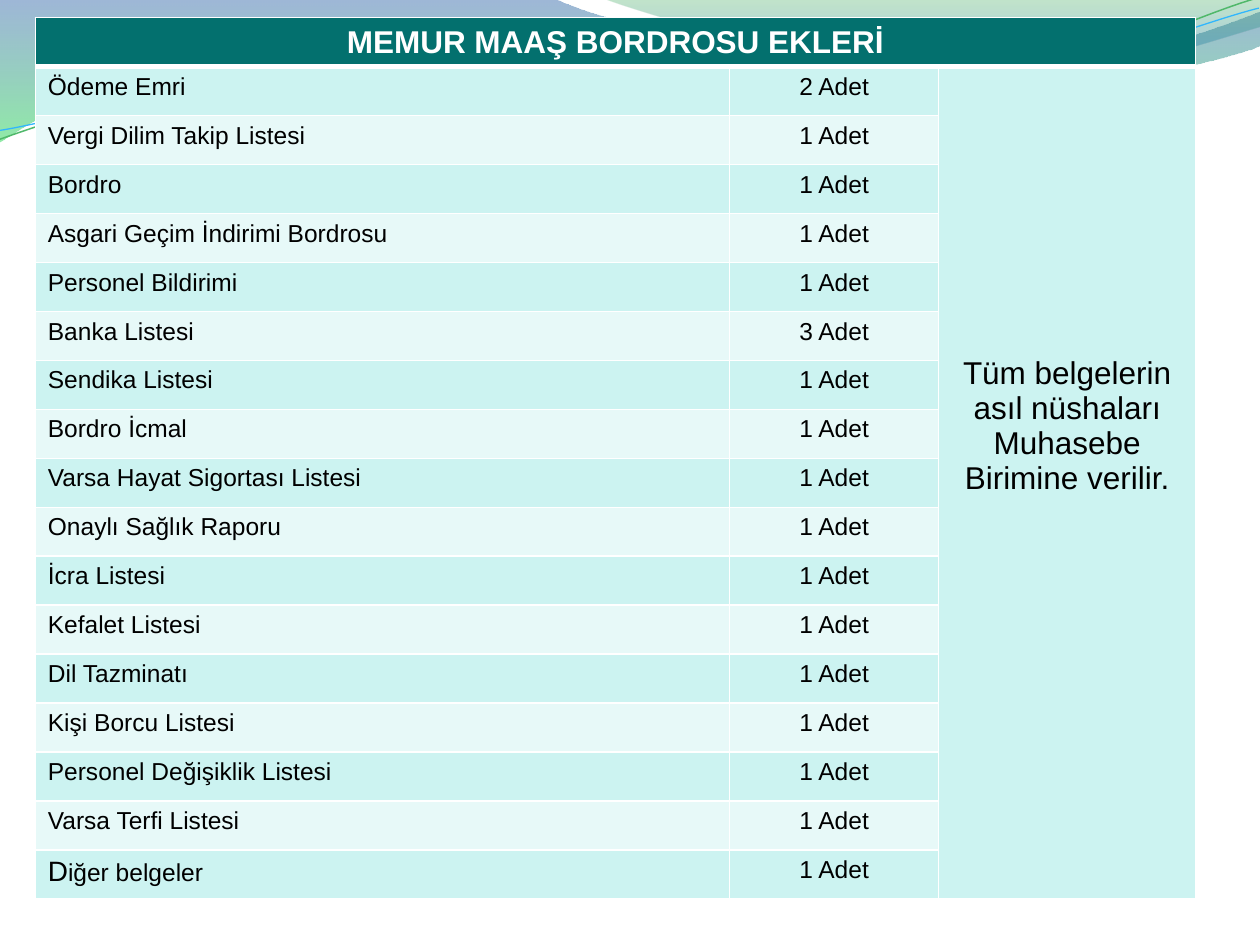
from lxml.etree import Element, SubElement
from pptx import Presentation
from pptx.dml.color import RGBColor as Rgb
from pptx.enum.text import MSO_ANCHOR as Anchor, PP_ALIGN as Align
from pptx.oxml.ns import qn
from pptx.util import Inches, Pt

WHITE = Rgb(0xFF, 0xFF, 0xFF)
BLACK = Rgb(0x00, 0x00, 0x00)
HEADER_TEAL = Rgb(0x03, 0x70, 0x6E)
BAND_DARK = Rgb(0xCC, 0xF3, 0xF1)
BAND_LIGHT = Rgb(0xE7, 0xF9, 0xF8)
WAVE_BLUE = Rgb(0x29, 0x60, 0xA7)
WAVE_LIME = Rgb(0x35, 0xDA, 0x5E)
WAVE_GREEN = Rgb(0x36, 0xA7, 0x52)
WAVE_SKY = Rgb(0x24, 0x72, 0xD3)
LINE_GREEN = Rgb(0x50, 0xB8, 0x6A)
LINE_BLUE = Rgb(0x31, 0xB6, 0xFD)

FONT = "Arial"
CURVE_ROTATION = 357.3
TITLE = "MEMUR MAAŞ BORDROSU EKLERİ"
NOTE = "Tüm belgelerin asıl nüshaları Muhasebe Birimine verilir."
DOCUMENTS = [
    ("Ödeme Emri", 2),
    ("Vergi Dilim Takip Listesi", 1),
    ("Bordro", 1),
    ("Asgari Geçim İndirimi Bordrosu", 1),
    ("Personel Bildirimi", 1),
    ("Banka Listesi", 3),
    ("Sendika Listesi", 1),
    ("Bordro İcmal", 1),
    ("Varsa Hayat Sigortası Listesi", 1),
    ("Onaylı Sağlık Raporu", 1),
    ("İcra Listesi", 1),
    ("Kefalet Listesi", 1),
    ("Dil Tazminatı", 1),
    ("Kişi Borcu Listesi", 1),
    ("Personel Değişiklik Listesi", 1),
    ("Varsa Terfi Listesi", 1),
    ("Diğer belgeler", 1),
]

LEFT_WAVE = [
    (0, 0), (4.4, -0.01),
    (4.76, 0.17, 6.64, 0.63, 7.58, 0.63), (8.53, 0.63, 9.58, 0.26, 10, 0.09),
    (10.01, 0.36),
    (9.83, 0.44, 8.7, 0.76, 7.46, 0.75), (6.22, 0.75, 3.82, 0.28, 2.57, 0.34),
    (1.29, 0.36, 0.46, 0.83, -0.01, 1.13), (0, 0),
]
RIGHT_WAVE = [
    (4.79, -0.01),
    (5.09, 0.11, 6.82, 0.62, 7.69, 0.65), (8.56, 0.69, 9.61, 0.32, 10, 0.21),
    (10, 0), (4.79, -0.01),
]
GREEN_CURVE = [
    (-0.02, 0.87),
    (0.47, 0.72, 1.58, 0.41, 2.78, 0.42), (3.96, 0.42, 5.91, 0.93, 7.12, 0.9),
    (8.32, 0.87, 9.4, 0.36, 10, 0.22),
]
BLUE_CURVE = [
    (-0.02, 0.8),
    (0.46, 0.75, 1.64, 0.45, 2.83, 0.46), (4.03, 0.46, 5.96, 0.88, 7.16, 0.85),
    (8.35, 0.83, 9.42, 0.42, 10.01, 0.3),
]


def add_outline(slide, left, top, segments, close):
    """Add a freeform of straight (x, y) and cubic six-number segments."""
    points = [
        (left + Inches(x), top + Inches(y))
        for segment in segments
        for x, y in zip(segment[::2], segment[1::2])
    ]
    builder = slide.shapes.build_freeform(*points[0])
    builder.add_line_segments(points[1:], close=close)
    shape = builder.convert_to_shape()
    shape.shadow.inherit = False
    lines = iter(list(shape._element.iter(qn("a:lnTo"))))
    for segment in segments[1:]:
        first = next(lines)
        if len(segment) == 6:
            curve = Element(qn("a:cubicBezTo"))
            first.addprevious(curve)
            for line in (first, next(lines), next(lines)):
                curve.append(line[0])
                line.getparent().remove(line)
    return shape


def add_wave(slide, left, top, segments, stops):
    """Add a translucent wave with a downward gradient."""
    shape = add_outline(slide, left, top, segments, True)
    shape.line.fill.background()
    shape.fill.gradient()
    shape.fill.gradient_angle = 270
    for stop, (position, color, _) in zip(shape.fill.gradient_stops, stops):
        stop.position = position
        stop.color.rgb = color
    colors = shape._element.spPr.iter(qn("a:srgbClr"))
    for color, (_, _, opacity) in zip(list(colors), stops):
        SubElement(color, qn("a:alpha"), val=str(opacity * 1000))


def add_curve(slide, left, top, segments, color, width):
    """Add a thin, slightly turned curve."""
    shape = add_outline(slide, left, top, segments, False)
    shape.rotation = CURVE_ROTATION
    shape.fill.background()
    shape.line.color.rgb = color
    shape.line.width = Pt(width)


def add_wave_banner(slide, left, top):
    """Place the decorative waves and curves along the top."""
    add_wave(slide, left, top, LEFT_WAVE, [(0, WAVE_BLUE, 45), (1, WAVE_LIME, 55)])
    add_wave(slide, left, top, RIGHT_WAVE, [(0, WAVE_GREEN, 30), (0.8, WAVE_SKY, 45)])
    add_curve(slide, left, top, GREEN_CURVE, LINE_GREEN, 0.85)
    add_curve(slide, left, top, BLUE_CURVE, LINE_BLUE, 0.75)


def set_borders(cell, widths):
    """Give a cell white borders of the given widths by side."""
    properties = cell._tc.get_or_add_tcPr()
    for index, (side, width) in enumerate(widths.items()):
        line = Element(qn(f"a:ln{side}"), w=str(Pt(width)))
        fill = SubElement(line, qn("a:solidFill"))
        SubElement(fill, qn("a:srgbClr"), val=str(WHITE))
        properties.insert(index, line)


def fill_cell(cell, runs, fill, align=Align.LEFT, color=BLACK, bold=False):
    """Fill a cell and write its (text, size) runs."""
    cell.fill.solid()
    cell.fill.fore_color.rgb = fill
    paragraph = cell.text_frame.paragraphs[0]
    paragraph.alignment = align
    for text, size in runs:
        run = paragraph.add_run()
        run.text = text
        run.font.name = FONT
        run.font.size = Pt(size)
        run.font.bold = bold
        run.font.color.rgb = color


def add_document_table(slide, left, top, width, height):
    """Place the table of payroll attachments in the given box."""
    row_count = len(DOCUMENTS) + 1
    table = slide.shapes.add_table(row_count, 3, left, top, width, height).table
    count_width, note_width = Inches(1.66), Inches(2.04)
    widths = (width - count_width - note_width, count_width, note_width)
    for column, column_width in zip(table.columns, widths):
        column.width = column_width

    header = table.cell(0, 0)
    header.merge(table.cell(0, 2))
    fill_cell(header, [(TITLE, 18)], HEADER_TEAL, Align.CENTER, WHITE, True)
    header.vertical_anchor = Anchor.MIDDLE

    for row, (name, count) in enumerate(DOCUMENTS, start=1):
        band = BAND_DARK if row % 2 else BAND_LIGHT
        is_last = row == len(DOCUMENTS)
        runs = [(name[0], 16), (name[1:], 14)] if is_last else [(name, 14)]
        fill_cell(table.cell(row, 0), runs, band)
        fill_cell(table.cell(row, 1), [(f"{count} Adet", 14)], band, Align.CENTER)

    note = table.cell(1, 2)
    note.merge(table.cell(row_count - 1, 2))
    fill_cell(note, [(NOTE, 18)], BAND_DARK, Align.CENTER)
    note.vertical_anchor = Anchor.MIDDLE
    note.margin_bottom = Inches(0.95)

    for row in range(row_count):
        top_width, bottom_width = 3 if row == 1 else 1, 1 if row else 3
        for column in range(3):
            sides = {"L": 1, "R": 1, "T": top_width, "B": bottom_width}
            set_borders(table.cell(row, column), sides)


def main():
    """Build and save the slide."""
    presentation = Presentation()
    presentation.slide_width = Inches(10)
    presentation.slide_height = Inches(7.5)
    slide = presentation.slides.add_slide(presentation.slide_layouts[6])
    slide.background.fill.solid()
    slide.background.fill.fore_color.rgb = WHITE
    add_wave_banner(slide, Inches(0), Inches(0))
    add_document_table(slide, Inches(0.28), Inches(0.14), Inches(9.21), Inches(7))
    presentation.save("out.pptx")


if __name__ == "__main__":
    main()
